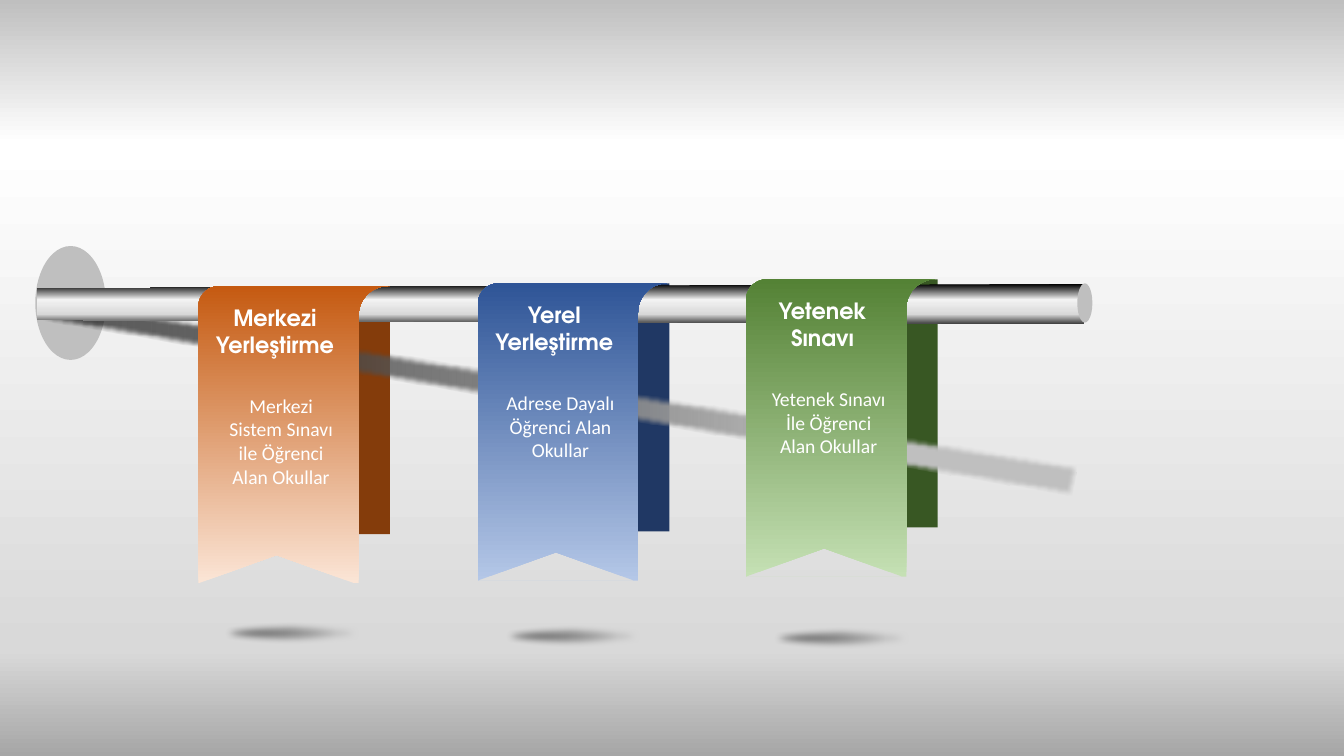
from math import cos, sin, radians
from lxml.etree import SubElement
from pptx import Presentation
from pptx.dml.color import RGBColor
from pptx.enum.shapes import MSO_SHAPE
from pptx.enum.text import MSO_AUTO_SIZE, PP_ALIGN
from pptx.oxml.ns import qn
from pptx.util import Cm, Pt

BLACK = RGBColor(0x00, 0x00, 0x00)
INK = RGBColor(0x0F, 0x0F, 0x0F)
CHARCOAL = RGBColor(0x40, 0x40, 0x40)
GREY = RGBColor(0xA6, 0xA6, 0xA6)
SILVER = RGBColor(0xBF, 0xBF, 0xBF)
PALE = RGBColor(0xD9, 0xD9, 0xD9)
MIST = RGBColor(0xF2, 0xF2, 0xF2)
WHITE = RGBColor(0xFF, 0xFF, 0xFF)

TITLE = {"size": Pt(16), "name": "TeX Gyre Adventor", "bold": True}
BODY = {"size": Pt(14), "name": "Calibri", "bold": False}

# left, top, floor shadow left and top (cm), light, main, dark, title, body, body height
BANNERS = [
    (5.0, 7.21, 5.26, 15.67, RGBColor(0xFB, 0xE5, 0xD6), RGBColor(0xC5, 0x5A, 0x11),
     RGBColor(0x84, 0x3C, 0x0B), "Merkezi Yerleştirme",
     "Merkezi Sistem Sınavı ile Öğrenci Alan Okullar", 2.64),
    (12.04, 7.14, 12.34, 15.75, RGBColor(0xB4, 0xC7, 0xE7), RGBColor(0x2F, 0x55, 0x97),
     RGBColor(0x20, 0x38, 0x64), "Yerel Yerleştirme",
     "Adrese Dayalı Öğrenci Alan Okullar", 2.06),
    (18.8, 7.04, 19.1, 15.8, RGBColor(0xC5, 0xE0, 0xB4), RGBColor(0x54, 0x82, 0x35),
     RGBColor(0x38, 0x57, 0x23), "Yetenek Sınavı",
     "Yetenek Sınavı İle Öğrenci Alan Okullar", 2.06),
]


def set_gradient(fill, element, stops, angle):
    """Stops are (percent, colour) or (percent, colour, opacity percent)."""
    fill.gradient()
    grad = element.find(".//" + qn("a:gradFill"))
    gs_list = grad.find(qn("a:gsLst"))
    for old in list(gs_list):
        gs_list.remove(old)
    for pos, color, *alpha in stops:
        gs = SubElement(gs_list, qn("a:gs"), pos=str(pos * 1000))
        clr = SubElement(gs, qn("a:srgbClr"), val=str(color))
        for a in alpha:
            SubElement(clr, qn("a:alpha"), val=str(a * 1000))
    grad.find(qn("a:lin")).set("ang", str(angle * 60000))


def paint(sp, paint_with, angle=0):
    sp.shadow.inherit = False
    sp.line.fill.background()
    if isinstance(paint_with, RGBColor):
        sp.fill.solid()
        sp.fill.fore_color.rgb = paint_with
    else:
        set_gradient(sp.fill, sp._element, paint_with, angle)
    return sp


def soften(sp, radius):
    effects = sp._element.spPr.find(qn("a:effectLst"))
    SubElement(effects, qn("a:softEdge"), rad=str(Cm(radius)))


def add_preset(s, kind, box, paint_with):
    return paint(s.shapes.add_shape(kind, *map(Cm, box)), paint_with)


def add_outline(s, points, stops, angle):
    pts = [(Cm(x), Cm(y)) for x, y in points]
    fb = s.shapes.build_freeform(*pts[0])
    fb.add_line_segments(pts[1:], close=True)
    return paint(fb.convert_to_shape(), stops, angle)


def add_text(s, box, text, style):
    tf = s.shapes.add_textbox(*map(Cm, box)).text_frame
    tf.word_wrap = True
    tf.auto_size = MSO_AUTO_SIZE.SHAPE_TO_FIT_TEXT
    p = tf.paragraphs[0]
    p.alignment = PP_ALIGN.CENTER
    r = p.add_run()
    r.text = text
    for key, value in style.items():
        setattr(r.font, key, value)
    r.font.color.rgb = WHITE


def arc(cx, cy, radius, start, end):
    step = (end - start) // 15
    return [(cx + radius * cos(radians(a)), cy + radius * sin(radians(a)))
            for a in range(start, end + step, step)]


def add_floor_shadow(s, x, y):
    sp = add_preset(s, MSO_SHAPE.OVAL, (x, y, 4.19, 0.58),
                    [(0, INK, 58), (77, SILVER)])
    soften(sp, 0.16)


def add_banner(s, x, y, light, main_color, title, body, body_height):
    bottom = y + 7.49
    points = (arc(x + 4.77, y + 0.73, 0.73, 270, 180)
              + [(x + 4.04, bottom), (x, bottom), (x + 3.94, bottom),
                 (x + 1.97, bottom - 0.71), (x, bottom)]
              + arc(x + 0.53, y + 0.53, 0.53, 180, 270))
    add_outline(s, points, [(0, light), (100, main_color)], 270)
    add_text(s, (x, y + 0.33, 3.86, 1.63), title, TITLE)
    add_text(s, (x + 0.33, y + 2.59, 3.51, body_height), body, BODY)


def add_pole(s):
    add_preset(s, MSO_SHAPE.OVAL, (0.89, 6.2, 1.78, 2.87), SILVER)
    # Slanted shadow on the wall
    wall_shadow = add_outline(
        s, [(1.1, 7.48), (27.12, 11.72), (26.98, 12.5), (1.1, 8.1)],
        [(0, BLACK, 63), (77, SILVER)], 0)
    soften(wall_shadow, 0.1)
    # Metal bar, widening to the right, and its end cap
    add_outline(s, [(0.94, 7.27), (27.32, 7.16), (27.32, 8.16), (0.94, 8.06)],
                [(0, BLACK), (39, MIST), (76, PALE), (100, CHARCOAL)], 90)
    add_preset(s, MSO_SHAPE.OVAL, (27.15, 7.14, 0.38, 0.99), SILVER)


def main():
    prs = Presentation()
    prs.slide_width, prs.slide_height = Cm(33.87), Cm(19.05)
    s = prs.slides.add_slide(prs.slide_layouts[6])
    set_gradient(s.background.fill, s._element,
                 [(0, SILVER), (19, WHITE), (86, PALE), (100, GREY)], 90)
    # Back halves of the banners, behind the pole
    for x, y, _, _, _, _, dark, *_ in BANNERS:
        add_preset(s, MSO_SHAPE.RECTANGLE, (x + 1.68, y, 3.15, 6.25), dark)
    add_pole(s)
    # Front halves with their text
    for x, y, shadow_x, shadow_y, light, main_color, _, *texts in BANNERS:
        add_banner(s, x, y, light, main_color, *texts)
        add_floor_shadow(s, shadow_x, shadow_y)
    prs.save("out.pptx")


if __name__ == "__main__":
    main()
